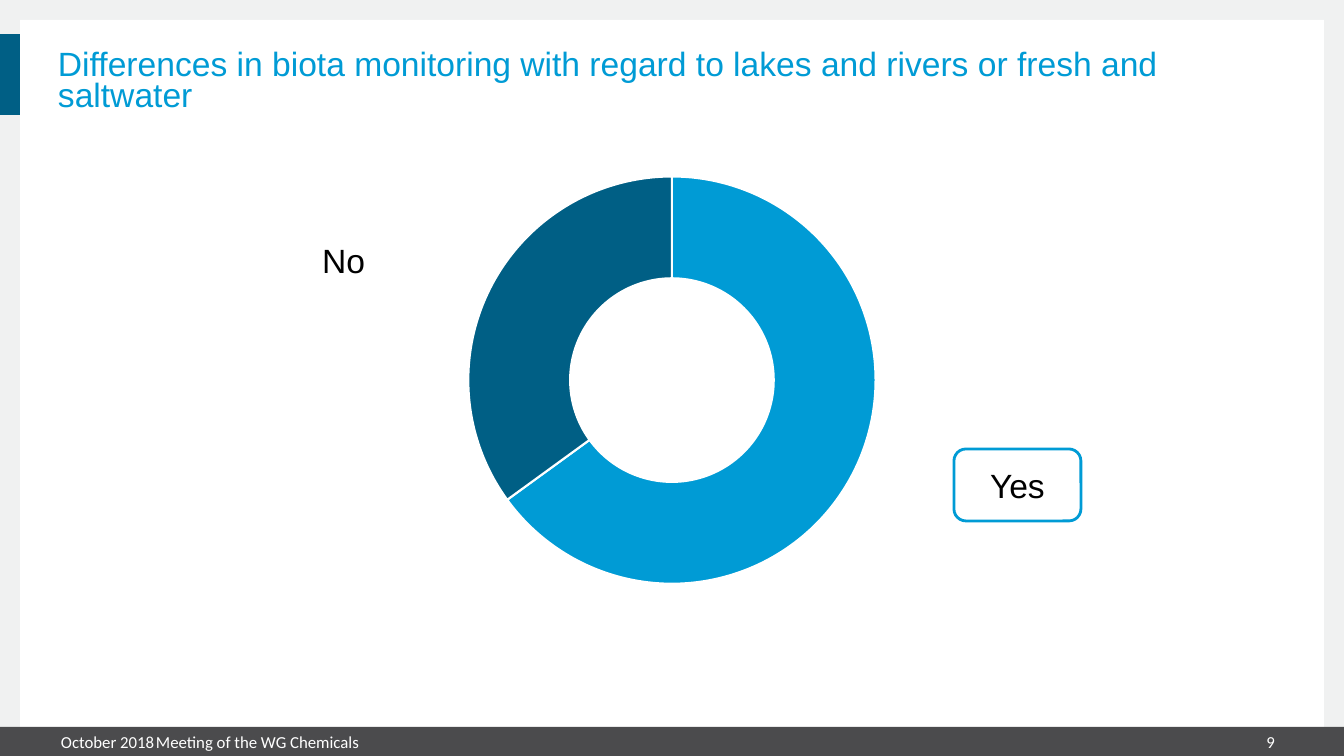
"""Build the slide on differences in biota monitoring, with a yes/no doughnut."""
import pptx
import pptx.chart.data
import pptx.dml.color
import pptx.enum.chart
import pptx.enum.shapes
import pptx.enum.text
import pptx.oxml
import pptx.oxml.ns
import pptx.util

PX = 914400 / 100.8
WIDTH, HEIGHT = 1344, 756
BLUE, NAVY, WHITE, BLACK = "009BD5", "005F85", "FFFFFF", "000000"
SHAPE = pptx.enum.shapes.MSO_SHAPE
ALIGN = pptx.enum.text.PP_ALIGN
ANCHOR = pptx.enum.text.MSO_ANCHOR


def emu(*lengths):
    return [pptx.util.Emu(round(length * PX)) for length in lengths]


def paint(fill, colour):
    fill.solid()
    fill.fore_color.rgb = pptx.dml.color.RGBColor.from_string(colour)


def add_box(slide, box, colour=None, outline=None, kind=SHAPE.RECTANGLE):
    panel = slide.shapes.add_shape(kind, *emu(*box))
    panel.shadow.inherit = False
    if colour:
        paint(panel.fill, colour)
    else:
        panel.fill.background()
    if outline:
        paint(panel.line.fill, outline)
        panel.line.width = pptx.util.Pt(2)
    else:
        panel.line.fill.background()
    return panel


def write(frame, words, size, font, colour, align=ALIGN.LEFT, anchor=ANCHOR.MIDDLE, margin=0):
    frame.vertical_anchor = anchor
    frame.margin_left = frame.margin_right = emu(margin)[0]
    frame.margin_top = frame.margin_bottom = emu(margin / 2)[0]
    paragraph = frame.paragraphs[0]
    paragraph.alignment = align
    run = paragraph.add_run()
    run.text = words
    run.font.size = pptx.util.Pt(size)
    run.font.name = font
    paint(run.font.fill, colour)
    return paragraph


def add_text(slide, box, words, size, font, colour, wrap=True, **layout):
    frame = slide.shapes.add_textbox(*emu(*box)).text_frame
    frame.word_wrap = wrap
    return write(frame, words, size, font, colour, **layout)


def place_plot(chart, **fractions):
    qn = pptx.oxml.ns.qn
    plot_area = chart.element.find(".//" + qn("c:plotArea"))
    for automatic in plot_area.findall(qn("c:layout")):
        plot_area.remove(automatic)
    places = "".join(f'<c:{name} val="{value:.2f}"/>' for name, value in fractions.items())
    plot_area.insert(0, pptx.oxml.parse_xml(
        f'<c:layout {pptx.oxml.ns.nsdecls("c")}><c:manualLayout><c:layoutTarget val="inner"/>'
        f'<c:xMode val="edge"/><c:yMode val="edge"/>{places}</c:manualLayout></c:layout>'))


def add_doughnut(slide, box, shares, colours):
    answers = pptx.chart.data.CategoryChartData()
    answers.categories = [str(number) for number in range(1, len(shares) + 1)]
    answers.add_series("Series 1", shares)
    chart = slide.shapes.add_chart(
        pptx.enum.chart.XL_CHART_TYPE.DOUGHNUT, *emu(*box), answers).chart
    chart.has_legend = chart.has_title = False
    chart.font.size = pptx.util.Pt(10)
    chart.font.name = "Cambria"
    paint(chart.font.fill, BLACK)
    chart.plots[0].vary_by_categories = True
    for index, colour in enumerate(colours):
        slice_format = chart.plots[0].series[0].points[index].format
        paint(slice_format.fill, colour)
        paint(slice_format.line.fill, WHITE)
        slice_format.line.width = pptx.util.Pt(1.5)
    chart.element.find(".//" + pptx.oxml.ns.qn("c:holeSize")).set("val", "43")
    place_plot(chart, x=0.27, y=0.035, w=0.46, h=0.93)


def main():
    deck = pptx.Presentation()
    deck.slide_width, deck.slide_height = emu(WIDTH, HEIGHT)
    slide = deck.slides.add_slide(deck.slide_layouts[6])

    footer_top, footer_height = 727, 29
    for box, colour in (
        ((0, 0, WIDTH, HEIGHT), "F0F1F1"),
        ((20, 20, 1304, 724), WHITE),
        ((0, footer_top, WIDTH, footer_height), "4B4B4D"),
        ((0, 34, 20, 81), NAVY),
    ):
        add_box(slide, box, colour)

    add_doughnut(slide, (229, 159, 886, 438), (65, 35), (BLUE, NAVY))
    title = add_text(
        slide, (58, 47, 1210, 67),
        "Differences in biota monitoring with regard to lakes and rivers or fresh and saltwater",
        24, "Arial", BLUE, anchor=ANCHOR.BOTTOM)
    title.line_spacing = pptx.util.Pt(22)

    for left, width, words, align in (
        (61, 95, "October 2018", ALIGN.LEFT),
        (156, 988, "Meeting of the WG Chemicals", ALIGN.LEFT),
        (1193, 82, "9", ALIGN.RIGHT),
    ):
        add_text(slide, (left, footer_top, width, footer_height), words,
                 12, "Calibri", WHITE, align=align)

    add_text(slide, (312, 235, 64, 50), "No", 24, "Arial", BLACK,
             wrap=False, anchor=ANCHOR.TOP, margin=10)
    yes = add_box(slide, (954, 449, 127, 72), outline=BLUE, kind=SHAPE.ROUNDED_RECTANGLE)
    write(yes.text_frame, "Yes", 24, "Arial", BLACK, align=ALIGN.CENTER, margin=10)

    deck.save("out.pptx")


if __name__ == "__main__":
    main()
